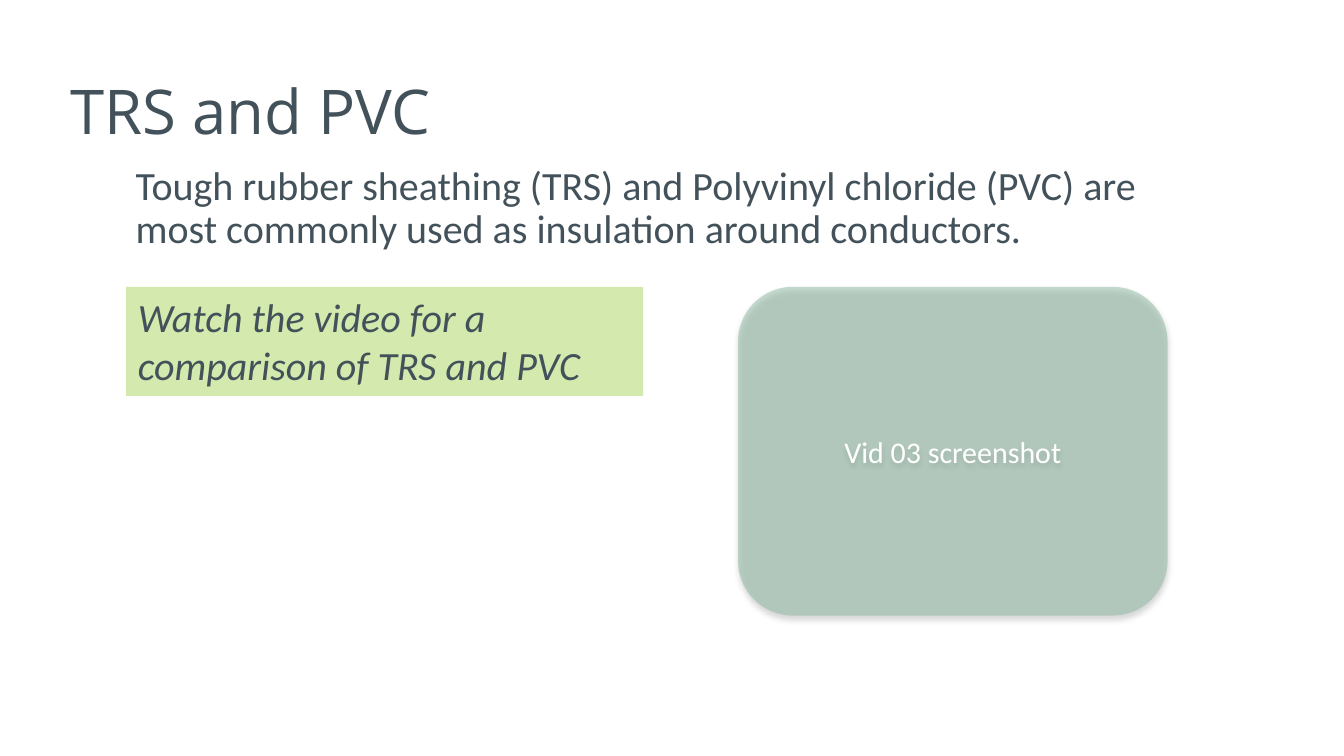
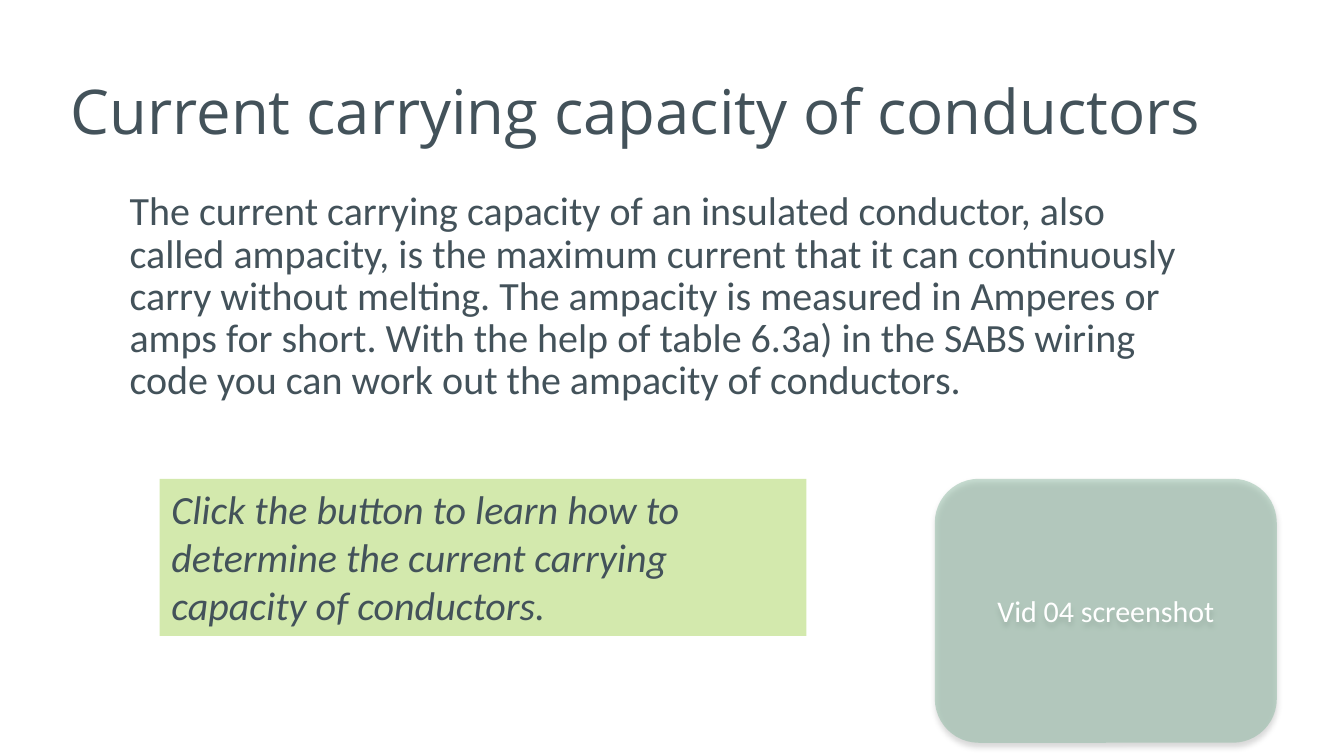
import lxml.etree
import pptx
import pptx.dml.color
import pptx.enum.shapes
import pptx.enum.text
import pptx.oxml.ns
import pptx.util

Inches = pptx.util.Inches
Pt = pptx.util.Pt
RGBColor = pptx.dml.color.RGBColor
Align = pptx.enum.text.PP_ALIGN
Anchor = pptx.enum.text.MSO_ANCHOR
AutoShape = pptx.enum.shapes.MSO_SHAPE
qn = pptx.oxml.ns.qn

SLATE = RGBColor(0x43, 0x52, 0x5A)
LIME = RGBColor(0xD3, 0xE9, 0xAD)
SAGE = RGBColor(0x86, 0xB5, 0x9C)
WHITE = RGBColor(0xFF, 0xFF, 0xFF)
BLACK = RGBColor(0x00, 0x00, 0x00)

TITLE_FONT = "Open Sans"
BODY_FONT = "Calibri"
TITLE_BOX = (0.49, 0.34, 9.66, 1.22)


def place(shape, box):
    shape.left, shape.top, shape.width, shape.height = map(Inches, box)


def write(shape, text, size, color=SLATE, font=BODY_FONT, italic=False,
          align=Align.LEFT, anchor=Anchor.TOP):
    frame = shape.text_frame
    frame.word_wrap = True
    frame.auto_size = pptx.enum.text.MSO_AUTO_SIZE.NONE
    frame.vertical_anchor = anchor
    paragraph = frame.paragraphs[0]
    paragraph.alignment = align
    run = paragraph.add_run()
    run.text = text
    run.font.name = font
    run.font.size = Pt(size)
    run.font.italic = italic
    run.font.color.rgb = color
    return paragraph


def add_alpha(color_element, percent):
    alpha = lxml.etree.SubElement(color_element, qn("a:alpha"))
    alpha.set("val", str(percent * 1000))


def add_shadow(shape):
    effects = shape._element.spPr.find(qn("a:effectLst"))
    shadow = lxml.etree.SubElement(effects, qn("a:outerShdw"))
    shadow.set("blurRad", str(Pt(3.5)))
    shadow.set("dist", str(Pt(2.2)))
    shadow.set("dir", str(90 * 60000))
    shadow.set("rotWithShape", "0")
    color = lxml.etree.SubElement(shadow, qn("a:srgbClr"))
    color.set("val", str(BLACK))
    add_alpha(color, 32)


def add_panel(slide, kind, box, color):
    shape = slide.shapes.add_shape(kind, *map(Inches, box))
    shape.shadow.inherit = False
    shape.fill.solid()
    shape.fill.fore_color.rgb = color
    shape.line.fill.background()
    return shape


def fill_title(slide, text):
    title = slide.shapes.title
    place(title, TITLE_BOX)
    paragraph = write(title, text, 37, font=TITLE_FONT, anchor=Anchor.MIDDLE)
    paragraph.line_spacing = 0.9


def fill_body(slide, text, box, line_spacing):
    body = slide.placeholders[1]
    place(body, box)
    paragraph = write(body, text, 24)
    paragraph.line_spacing = line_spacing
    paragraph.space_before = Pt(8.4)
    properties = paragraph._p.get_or_add_pPr()
    properties.set("marL", "0")
    properties.set("indent", "0")
    lxml.etree.SubElement(properties, qn("a:buNone"))


def add_prompt(slide, text, box):
    prompt = add_panel(slide, AutoShape.RECTANGLE, box, LIME)
    write(prompt, text, 24, italic=True)


def add_video_panel(slide, text, box):
    panel = add_panel(slide, AutoShape.ROUNDED_RECTANGLE, box, SAGE)
    fill = panel._element.spPr.find(qn("a:solidFill"))
    add_alpha(fill.find(qn("a:srgbClr")), 46)
    add_shadow(panel)
    write(panel, text, 18, color=WHITE, align=Align.CENTER, anchor=Anchor.MIDDLE)


def add_video_slide(presentation, title, body, body_box, prompt, prompt_box,
                    video, video_box, line_spacing=0.9):
    slide = presentation.slides.add_slide(presentation.slide_layouts[1])
    fill_title(slide, title)
    fill_body(slide, body, body_box, line_spacing)
    add_prompt(slide, prompt, prompt_box)
    add_video_panel(slide, video, video_box)


def main():
    presentation = pptx.Presentation()
    presentation.slide_width = Inches(11.2)
    presentation.slide_height = Inches(6.3)
    add_video_slide(
        presentation,
        title="TRS and PVC",
        body="Tough rubber sheathing (TRS) and Polyvinyl chloride (PVC) are "
             "most commonly used as insulation around conductors.",
        body_box=(1.03, 1.33, 9.09, 0.83),
        prompt="Watch the video for a comparison of TRS and PVC",
        prompt_box=(1.05, 2.39, 4.31, 0.91),
        video="Vid 03 screenshot",
        video_box=(6.15, 2.39, 3.58, 2.74),
    )
    add_video_slide(
        presentation,
        title="Current carrying capacity of conductors",
        body="The current carrying capacity of an insulated conductor, also "
             "called ampacity, is the maximum current that it can continuously "
             "carry without melting. The ampacity is measured in Amperes or "
             "amps for short. With the help of table 6.3a) in the SABS wiring "
             "code you can work out the ampacity of conductors.",
        body_box=(0.98, 1.55, 9.17, 1.84),
        prompt="Click the button to learn how to determine the current "
               "carrying capacity of conductors.",
        prompt_box=(1.33, 3.99, 5.39, 1.31),
        video="Vid 04 screenshot",
        video_box=(7.79, 3.99, 2.85, 2.2),
        line_spacing=0.88,
    )
    presentation.save("out.pptx")


if __name__ == "__main__":
    main()
